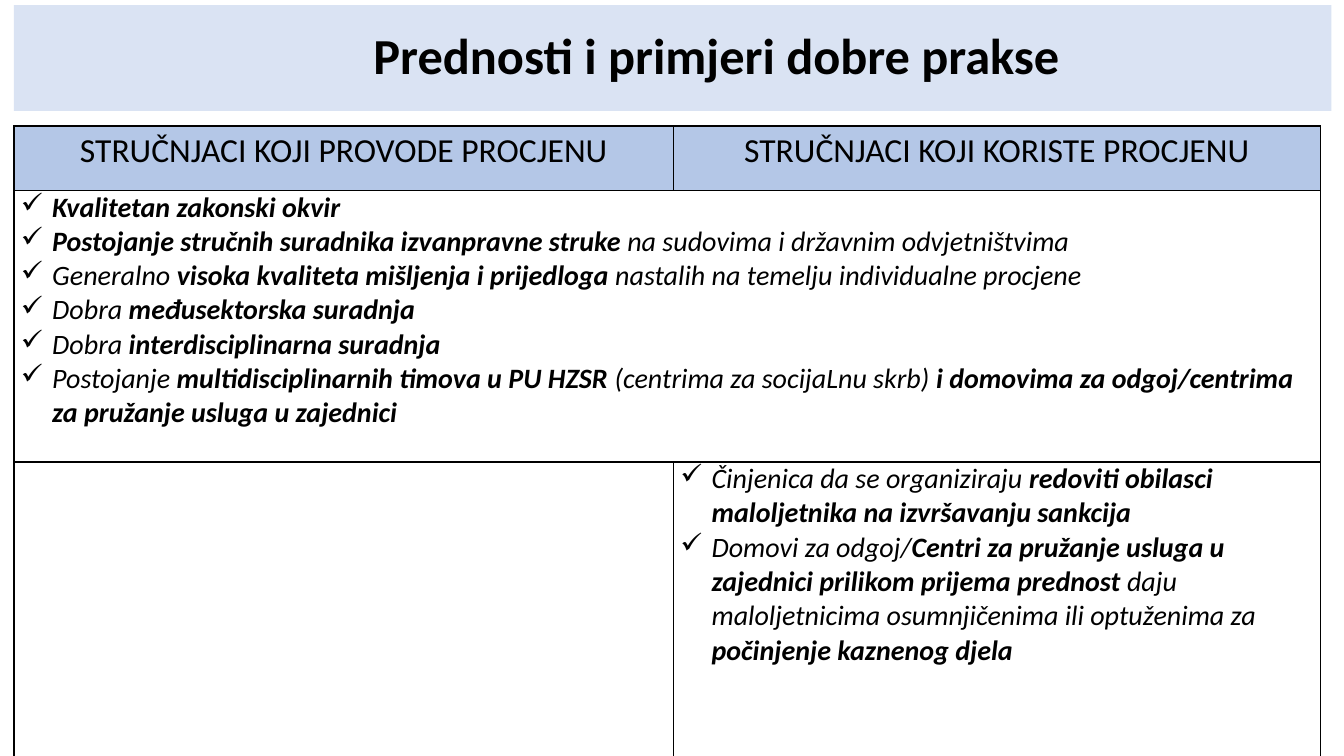
import pptx
import pptx.util
import pptx.dml.color
import pptx.enum.shapes
import pptx.enum.text
import pptx.oxml
import pptx.oxml.ns

TITLE = "Prednosti i primjeri dobre prakse"
HEADINGS = ["STRUČNJACI KOJI PROVODE PROCJENU", "STRUČNJACI KOJI KORISTE PROCJENU"]
# Asterisks enclose the bold parts
SHARED_STRENGTHS = [
    "*Kvalitetan zakonski okvir*",
    "*Postojanje stručnih suradnika izvanpravne struke *na sudovima i državnim odvjetništvima",
    "Generalno *visoka kvaliteta mišljenja i prijedloga *nastalih na temelju individualne procjene",
    "Dobra *međusektorska suradnja*",
    "Dobra *interdisciplinarna suradnja*",
    "Postojanje *multidisciplinarnih timova u PU HZSR *(centrima za socijaLnu skrb) "
    "*i domovima za odgoj/centrima za pružanje usluga u zajednici*",
]
USER_STRENGTHS = [
    "Činjenica da se organiziraju *redoviti obilasci maloljetnika na izvršavanju sankcija*",
    "Domovi za odgoj/*Centri za pružanje usluga u zajednici prilikom prijema prednost *"
    "daju maloljetnicima osumnjičenima ili optuženima za *počinjenje kaznenog djela*",
]


def color(text):
    return pptx.dml.color.RGBColor.from_string(text)


class Page:
    FONT, INK, BAND, HEAD = "Calibri", "000000", "DAE3F3", "B4C7E7"
    COLUMNS, ROWS = 96, 54

    def __init__(self, deck):
        self.deck = deck
        self.page = deck.slides.add_slide(deck.slide_layouts[6])

    def across(self, columns):
        return round(self.deck.slide_width * columns / self.COLUMNS)

    def down(self, rows):
        return round(self.deck.slide_height * rows / self.ROWS)

    def style(self, span, size, bold=False, italic=False):
        span.font.name = self.FONT
        span.font.size = pptx.util.Pt(size)
        span.font.bold = bold
        span.font.italic = italic
        span.font.color.rgb = color(self.INK)

    def title(self, text, left, top, width, height):
        box = self.page.shapes.add_shape(
            pptx.enum.shapes.MSO_SHAPE.RECTANGLE,
            self.across(left), self.down(top), self.across(width), self.down(height))
        box.shadow.inherit = False
        box.fill.solid()
        box.fill.fore_color.rgb = color(self.BAND)
        box.line.fill.background()
        frame = box.text_frame
        frame.word_wrap = True
        frame.vertical_anchor = pptx.enum.text.MSO_ANCHOR.MIDDLE
        frame.margin_left = self.across(7)
        frame.text = text
        para = frame.paragraphs[0]
        para.alignment = pptx.enum.text.PP_ALIGN.CENTER
        para.line_spacing = 0.9
        self.style(para.runs[0], 36, bold=True)

    def table(self, left, top, widths, heights):
        table = self.page.shapes.add_table(
            len(heights), len(widths), self.across(left), self.down(top),
            self.across(sum(widths)), self.down(sum(heights))).table
        table.first_row = table.horz_banding = False
        for column, width in zip(table.columns, widths):
            column.width = self.across(width)
        for row, height in zip(table.rows, heights):
            row.height = self.down(height)
        for cell in table.iter_cells():
            self.border(cell)
            cell.fill.background()
        return table

    def border(self, cell):
        properties = cell._tc.get_or_add_tcPr()
        for side in "LRTB":
            properties.append(pptx.oxml.parse_xml(
                f'<a:ln{side} {pptx.oxml.ns.nsdecls("a")} w="12700"><a:solidFill>'
                f'<a:srgbClr val="{self.INK}"/></a:solidFill></a:ln{side}>'))

    def heading(self, cell, text):
        cell.fill.solid()
        cell.fill.fore_color.rgb = color(self.HEAD)
        cell.text_frame.text = text
        para = cell.text_frame.paragraphs[0]
        para.alignment = pptx.enum.text.PP_ALIGN.CENTER
        self.style(para.runs[0], 24)

    def checklist(self, cell, items):
        cell.margin_left = cell.margin_right = self.across(0.5)
        cell.margin_top = cell.margin_bottom = 0
        frame = cell.text_frame
        for index, item in enumerate(items):
            para = frame.add_paragraph() if index else frame.paragraphs[0]
            self.check_mark(para)
            for part, text in enumerate(item.split("*")):
                if text:
                    span = para.add_run()
                    span.text = text
                    self.style(span, 20, bold=part % 2 == 1, italic=True)

    def check_mark(self, para):
        properties = para._p.get_or_add_pPr()
        indent = pptx.util.Inches(0.31)
        properties.set("marL", str(indent))
        properties.set("indent", str(-indent))
        properties.append(pptx.oxml.parse_xml(
            f'<a:buChar {pptx.oxml.ns.nsdecls("a")} char="✓"/>'))


def main():
    deck = pptx.Presentation()
    deck.slide_width = pptx.util.Inches(13.33)
    deck.slide_height = pptx.util.Inches(7.5)
    page = Page(deck)

    # Title band
    page.title(TITLE, left=1, top=0.36, width=94.1, height=7.56)

    # Table: headings, shared strengths, strengths for one group
    table = page.table(left=1, top=9, widths=[47.1, 46.2], heights=[4.6, 19.4, 22])
    for column, text in enumerate(HEADINGS):
        page.heading(table.cell(0, column), text)
    table.cell(1, 0).merge(table.cell(1, 1))
    page.checklist(table.cell(1, 0), SHARED_STRENGTHS)
    page.checklist(table.cell(2, 1), USER_STRENGTHS)

    deck.save("out.pptx")


if __name__ == "__main__":
    main()
